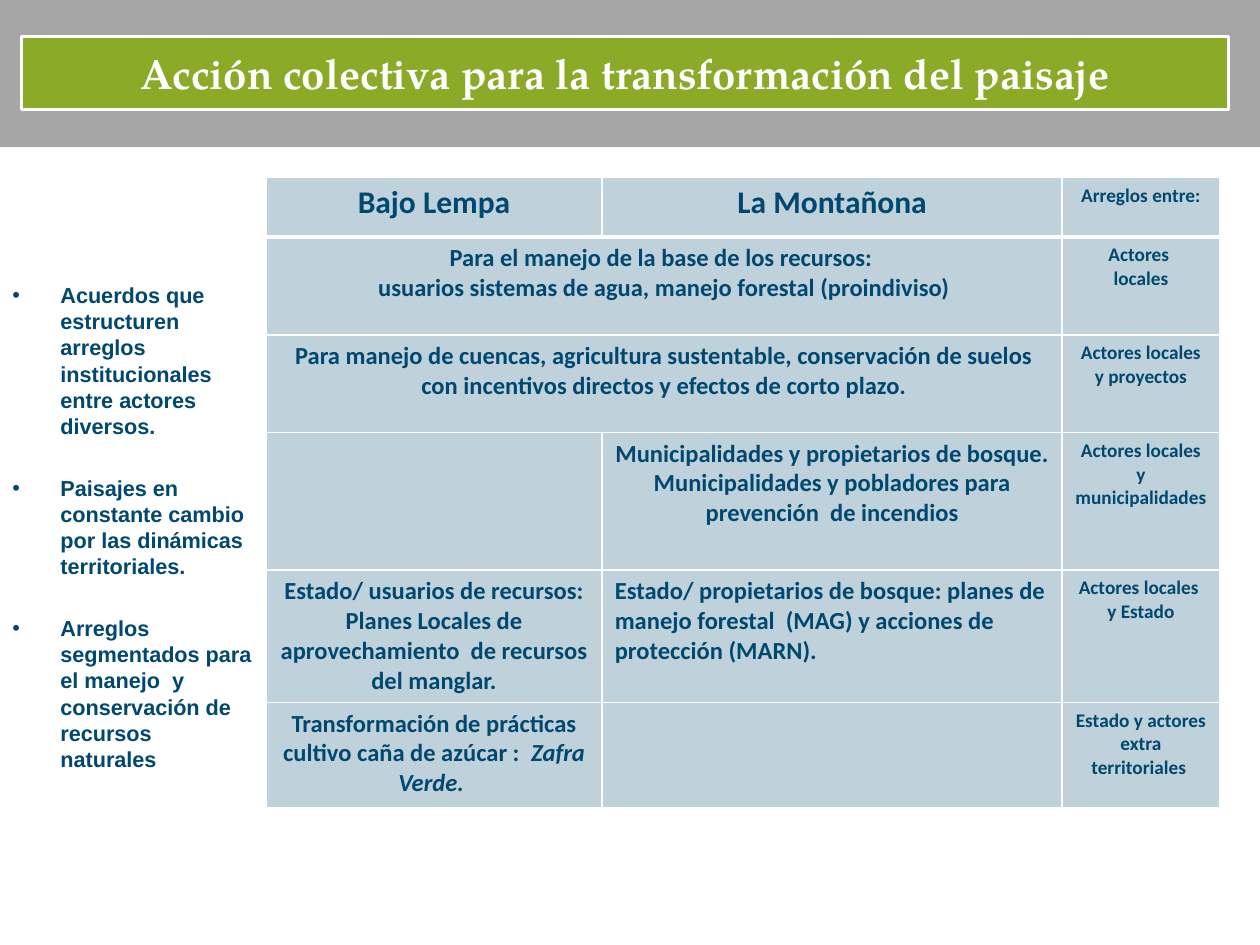
import pptx
import pptx.util
import pptx.dml.color
import pptx.enum.shapes
import pptx.enum.text
import pptx.oxml.ns
from lxml import etree

Cm, Pt = pptx.util.Cm, pptx.util.Pt
ALIGN = pptx.enum.text.PP_ALIGN
INK = {"navy": "00486F", "green": "8BAA27", "gray": "A6A6A6", "white": "FFFFFF"}
COLS = [6.78, 9.27, 3.18]
ROWS = [1.2, 1.97, 1.97, 2.77, 2.67, 2.13]
POINTS = [
    "Acuerdos que estructuren arreglos institucionales entre actores diversos.",
    "Paisajes en constante cambio por las dinámicas territoriales.",
    "Arreglos segmentados para el manejo  y conservación de recursos naturales",
]
GRID = [
    [["Bajo Lempa"], ["La Montañona"], ["Arreglos entre:"]],
    [["Para el manejo de la base de los recursos: ",
      "usuarios sistemas de agua, manejo forestal (proindiviso)"],
     None, ["Actores ", "locales"]],
    [["Para manejo de cuencas, agricultura sustentable, conservación de suelos "
      "con incentivos directos y efectos de corto plazo."],
     None, ["Actores locales y proyectos"]],
    [[], ["Municipalidades y propietarios de bosque.",
          "Municipalidades y pobladores para prevención  de incendios"],
     ["Actores locales y municipalidades"]],
    [["Estado/ usuarios de recursos: Planes Locales de aprovechamiento  "
      "de recursos del manglar."],
     ["Estado/ propietarios de bosque: planes de manejo forestal  (MAG) y "
      "acciones de protección (MARN)."],
     ["Actores locales  y Estado"]],
    [[("Transformación de prácticas cultivo caña de azúcar :  ", "Zafra Verde. ")],
     [], ["Estado y actores extra territoriales "]],
]


def color(name):
    """Return the palette colour as an RGB value."""
    return pptx.dml.color.RGBColor.from_string(INK[name])


def node(owner, tag, **attrs):
    """Append a DrawingML child element and return it."""
    return etree.SubElement(owner, pptx.oxml.ns.qn("a:" + tag), attrs)


def paint(thing, name):
    """Give a shape or cell a solid fill."""
    thing.fill.solid()
    thing.fill.fore_color.rgb = color(name)


def write(para, text, size, face, ink, italic=None):
    """Add one bold run to a paragraph."""
    run = para.add_run()
    run.text = text
    font = run.font
    font.name, font.size, font.bold, font.italic = face, Pt(size), True, italic
    font.color.rgb = color(ink)


def paras(frame, count):
    """Yield the given number of paragraphs of a text frame."""
    for i in range(count):
        yield frame.add_paragraph() if i else frame.paragraphs[0]


def header(slide, x, y, w, h):
    """Place the gray band with the green title bar on it."""
    band = slide.shapes.add_shape(
        pptx.enum.shapes.MSO_SHAPE.RECTANGLE, Cm(x), Cm(y), Cm(w), Cm(h))
    band.shadow.inherit = False
    paint(band, "gray")
    band.line.fill.background()
    title = slide.shapes.title
    title.element.addprevious(band.element)
    title.left, title.top = Cm(x + 0.43), Cm(y + 0.74)
    title.width, title.height = Cm(w - 1.07), Cm(h - 1.5)
    paint(title, "green")
    title.line.color.rgb = color("white")
    title.line.width = Pt(1.5)
    frame = title.text_frame
    frame.vertical_anchor = pptx.enum.text.MSO_ANCHOR.MIDDLE
    para = frame.paragraphs[0]
    para.alignment = ALIGN.CENTER
    write(para, "Acción colectiva para la transformación del paisaje",
          24, "TeX Gyre Pagella", "white")


def notes(slide, x, y, w, h):
    """Place the bulleted list beside the table."""
    frame = slide.shapes.add_textbox(Cm(x), Cm(y), Cm(w), Cm(h)).text_frame
    frame.word_wrap = True
    for i, (para, text) in enumerate(zip(paras(frame, len(POINTS)), POINTS)):
        props = para._p.get_or_add_pPr()
        props.set("marL", str(Cm(0.97)))
        props.set("indent", str(Cm(-0.97)))
        node(props, "buFont", typeface="Arial")
        node(props, "buChar", char="•")
        para.line_spacing = Pt(14.9)
        para.space_before = Pt(20.6 if i else 0)
        write(para, text, 12.4, "Arial", "navy")


def style(cell, row):
    """Draw the white borders and the pale fill of a cell."""
    props = cell._tc.get_or_add_tcPr()
    edges = {"L": 1, "R": 1, "T": 3 if row == 1 else 1, "B": 1 if row else 3}
    for side, width in edges.items():
        line = node(props, "ln" + side, w=str(Pt(width)))
        node(node(line, "solidFill"), "srgbClr", val=INK["white"])
    paint(cell, "navy")
    tint = props.find(".//" + pptx.oxml.ns.qn("a:solidFill") +
                      "/" + pptx.oxml.ns.qn("a:srgbClr") + f"[@val='{INK['navy']}']")
    node(tint, "alpha", val="25000")


def matrix(slide, x, y, w, h):
    """Place the table of arrangements by territory."""
    table = slide.shapes.add_table(
        len(ROWS), len(COLS), Cm(x), Cm(y), Cm(w), Cm(h)).table
    table.first_row = table.horz_banding = False
    for col, size in zip(table.columns, COLS):
        col.width = Cm(size * w / sum(COLS))
    for row, size in zip(table.rows, ROWS):
        row.height = Cm(size * h / sum(ROWS))
    for r, line in enumerate(GRID):
        for c, texts in enumerate(line):
            cell = table.cell(r, c)
            style(cell, r)
            if texts is None:
                table.cell(r, c - 1).merge(cell)
                continue
            size = 11 if c == 2 else 14 if r else 18
            for para, text in zip(paras(cell.text_frame, len(texts)), texts):
                para.alignment = ALIGN.LEFT if (r, c) == (4, 1) else ALIGN.CENTER
                parts = text if isinstance(text, tuple) else (text,)
                for i, part in enumerate(parts):
                    write(para, part, size, "Calibri", "navy", i > 0)


def main():
    """Build and save the slide."""
    deck = pptx.Presentation()
    deck.slide_width, deck.slide_height = Cm(25.4), Cm(19.05)
    slide = deck.slides.add_slide(deck.slide_layouts[5])
    notes(slide, 0, 5.56, 5.36, 8)
    matrix(slide, 5.36, 3.58, sum(COLS), sum(ROWS))
    header(slide, 0, 0, 25.4, 2.97)
    deck.save("out.pptx")


if __name__ == "__main__":
    main()
